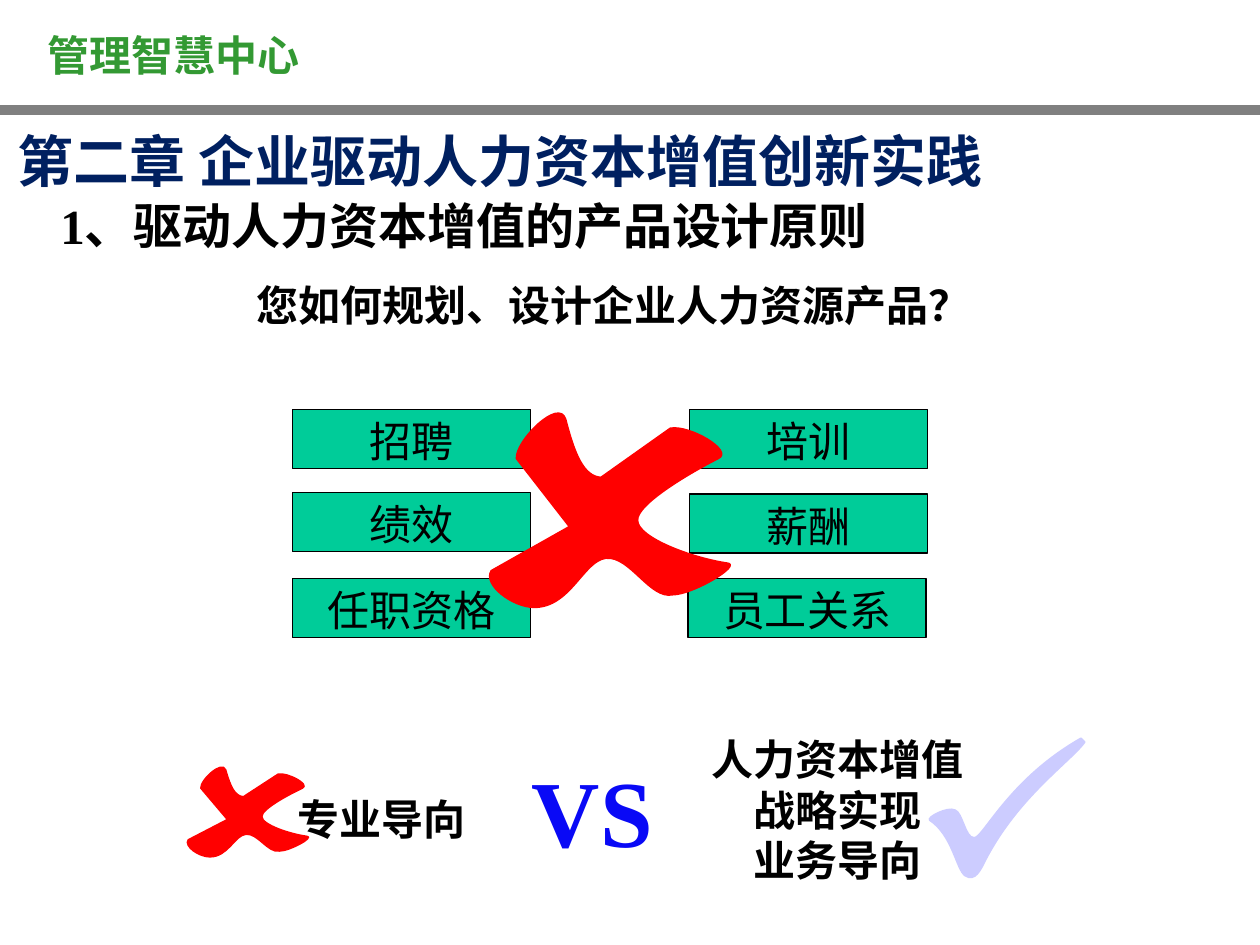
from lxml import etree
from pptx import Presentation
from pptx import util as u
from pptx.dml.color import RGBColor
from pptx.enum import shapes, text
from pptx.oxml.ns import qn

COLORS = {"bar": "808080", "header": "339933", "chapter": "002060", "black": "000000",
          "box": "00CC99", "versus": "0909F6", "versus_end": "0101B3",
          "cross": "FF0000", "check": "CCCCFF"}
CJK, LATIN = "Noto Sans CJK SC", "Times New Roman"
LEFT, CENTER = text.PP_ALIGN.LEFT, text.PP_ALIGN.CENTER

# lines, (left, top, width, height), format
HEADER = (["管理智慧中心"], (0.28, 0.02, 7.47, 0.83),
          {"name": CJK, "color": "header", "align": LEFT})
TITLE = (["1、驱动人力资本增值的产品设计原则"], (0.38, 1.47, 7.92, 0.63),
         {"size": 28, "align": LEFT})
QUESTION = (["您如何规划、设计企业人力资源产品？"], (0.91, 2.1, 7.92, 0.63), {})
ORIENTATIONS = [
    (["专业导向"], (1.46, 6.18, 3.13, 0.63), {}),
    (["人力资本增值", "战略实现", "业务导向"], (5.08, 6.03, 3.13, 0.79), {}),
]
VERSUS = (["VS"], (4.11, 5.92, 1.18, 1.01), {"size": 54, "color": "versus", "wrap": False})
CHAPTER = (["第二章 企业驱动人力资本增值创新实践"], (0.04, 0.92, 9.77, 0.7),
           {"name": CJK, "size": 32, "color": "chapter", "align": LEFT})

# name, left, top
MODULES = [("招聘", 2.32, 3.25), ("培训", 5.47, 3.25),
           ("绩效", 2.32, 3.91), ("薪酬", 5.47, 3.92),
           ("任职资格", 2.32, 4.59), ("员工关系", 5.46, 4.59)]
BOX_SIZE = (1.89, 0.47)

# Each segment after the start point holds one point (line) or three (cubic curve)
CROSS = [
    [(4.49, 3.33)], [(4.56, 3.6), (4.63, 3.78), (4.77, 3.79)], [(5.32, 3.4)],
    [(5.47, 3.37), (5.83, 3.58), (5.7, 3.64)], [(5.5, 3.74), (5.05, 4), (5.06, 4.13)],
    [(5.06, 4.27), (5.5, 4.43), (5.77, 4.47)], [(5.9, 4.48), (5.5, 4.72), (5.34, 4.72)],
    [(5.16, 4.76), (5, 4.41), (4.81, 4.43)], [(4.63, 4.45), (4.53, 4.82), (4.24, 4.82)],
    [(4.07, 4.82), (3.83, 4.64), (3.9, 4.53)], [(4.52, 4.18)], [(4.1, 3.64)],
    [(4.09, 3.5), (4.44, 3.15), (4.49, 3.33)],
]
CHECK = [
    [(7.38, 6.51)], [(7.56, 6.63), (7.59, 6.9), (7.66, 6.95)],
    [(7.74, 7), (7.78, 6.91), (7.83, 6.81)], [(8.09, 6.32), (8.49, 6.05), (8.61, 5.89)],
    [(8.61, 5.89), (8.58, 5.86), (8.58, 5.86)], [(8, 6.19), (7.8, 6.66), (7.73, 6.65)],
    [(7.66, 6.65), (7.64, 6.45), (7.58, 6.43)], [(7.52, 6.4), (7.35, 6.49), (7.38, 6.51)],
]
# outline, (left, top, width, height), colour
MARKS = [(CROSS, (3.83, 3.15, 2.07, 1.67), "cross"),
         (CHECK, (7.35, 5.86, 1.26, 1.14), "check"),
         (CROSS, (1.46, 6.03, 1.04, 0.77), "cross")]


def rgb(name):
    return RGBColor.from_string(COLORS[name])


def inches(values):
    return [u.Inches(value) for value in values]


def move(shape, place):
    for attribute, value in zip(("left", "top", "width", "height"), inches(place)):
        setattr(shape, attribute, value)


def write(shape, lines, name=LATIN, size=24, color="black", bold=True, align=CENTER,
          anchor=text.MSO_ANCHOR.MIDDLE, wrap=True):
    frame = shape.text_frame
    frame.text = "\n".join(lines)
    frame_format = {"word_wrap": wrap, "vertical_anchor": anchor,
                    "auto_size": text.MSO_AUTO_SIZE.NONE}
    for attribute, value in frame_format.items():
        setattr(frame, attribute, value)
    for paragraph in frame.paragraphs:
        paragraph.alignment = align
        for run in paragraph.runs:
            for attribute, value in {"name": name, "size": u.Pt(size), "bold": bold}.items():
                setattr(run.font, attribute, value)
            run.font.color.rgb = rgb(color)
            east_asian = etree.SubElement(run.font._element, qn("a:ea"))
            east_asian.set("typeface", CJK)


def add_text(slide, lines, place, text_format):
    shape = slide.shapes.add_textbox(*inches(place))
    write(shape, lines, **text_format)
    return shape


def shade(font):
    """Give the font a downward gradient."""
    font.fill.gradient()
    font.fill.gradient_angle = 270
    stops = [("versus", 0.25), ("versus_end", 1)]
    for stop, (color, position) in zip(font.fill.gradient_stops, stops):
        stop.color.rgb = rgb(color)
        stop.position = position


def paint(shape, fill, line=None, width=0.75):
    shape.shadow.inherit = False
    shape.fill.solid()
    shape.fill.fore_color.rgb = rgb(fill)
    if line:
        shape.line.color.rgb = rgb(line)
        shape.line.width = u.Pt(width)
    else:
        shape.line.fill.background()


def add_rectangle(slide, place, fill, line=None, kind=shapes.MSO_SHAPE.RECTANGLE):
    shape = slide.shapes.add_shape(kind, *inches(place))
    paint(shape, fill, line)
    return shape


def add_mark(slide, segments, place, color):
    """Draw all points as lines, then join each curve's three lines into one curve."""
    start, *rest = [inches(point) for segment in segments for point in segment]
    builder = slide.shapes.build_freeform(*start)
    builder.add_line_segments(rest, close=True)
    shape = builder.convert_to_shape()
    lines = iter(list(shape._element.iter(qn("a:lnTo"))))
    for segment in segments[1:]:
        steps = [next(lines) for _ in segment]
        if len(steps) == 3:
            curve = etree.Element(qn("a:cubicBezTo"))
            steps[0].addprevious(curve)
            for step in steps:
                curve.append(step[0])
                step.getparent().remove(step)
    move(shape, place)
    paint(shape, color, color, 1)


def main():
    presentation = Presentation()
    presentation.slide_width, presentation.slide_height = inches((10, 7.5))
    slide = presentation.slides.add_slide(presentation.slide_layouts[5])

    add_rectangle(slide, (0, 0.83, 10, 0.08), "bar",
                  kind=shapes.MSO_SHAPE.FLOWCHART_PROCESS)
    add_text(slide, *HEADER)

    title = slide.shapes.title
    lines, place, title_format = TITLE
    move(title, place)
    write(title, lines, **title_format)
    slide.shapes._spTree.append(title._element)
    add_text(slide, *QUESTION)

    for name, left, top in MODULES:
        box = add_rectangle(slide, (left, top, *BOX_SIZE), "box", "black")
        write(box, [name], bold=False, anchor=text.MSO_ANCHOR.TOP)

    for orientation in ORIENTATIONS:
        add_text(slide, *orientation)
    versus = add_text(slide, *VERSUS)
    shade(versus.text_frame.paragraphs[0].runs[0].font)

    for mark in MARKS:
        add_mark(slide, *mark)
    add_text(slide, *CHAPTER)

    presentation.save("out.pptx")


if __name__ == "__main__":
    main()
